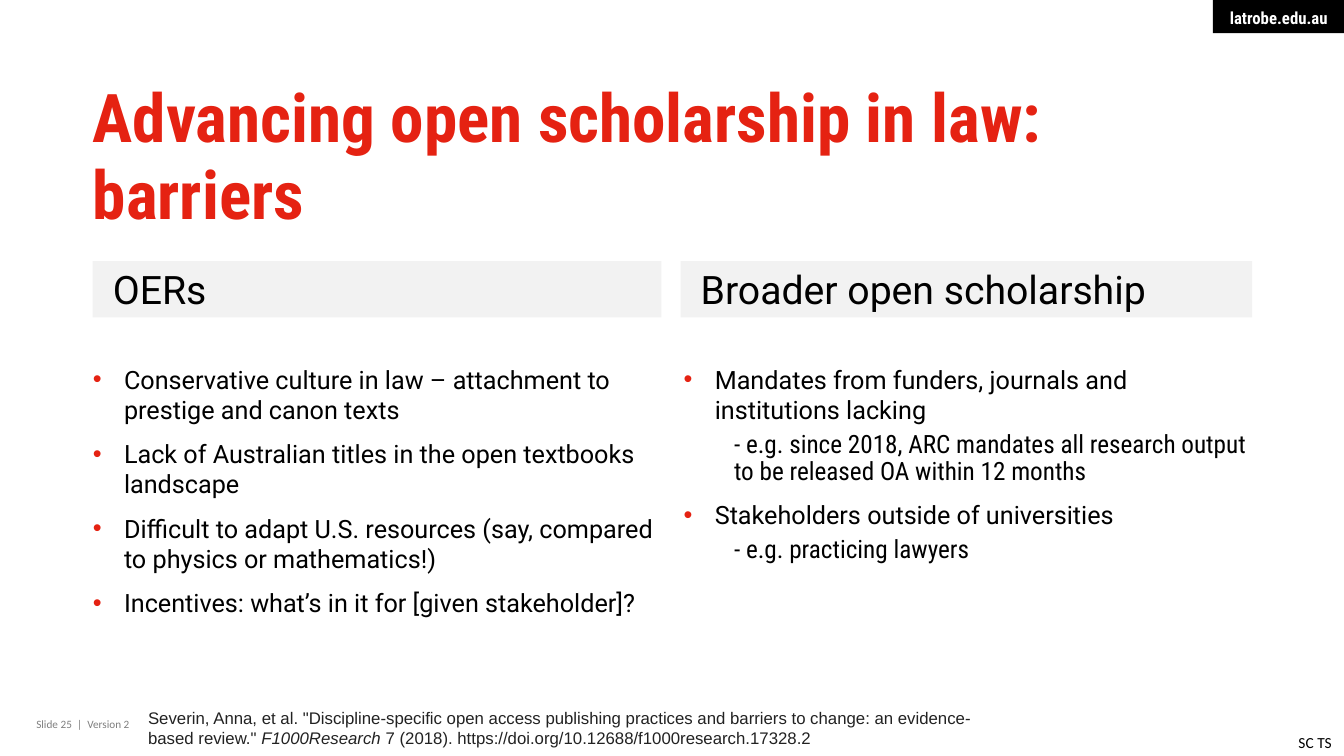
import pptx
import pptx.util
import pptx.dml.color
import pptx.enum.shapes
import pptx.enum.text
from lxml import etree
from pptx.util import Inches, Pt

HUES = {"red": "E52212", "black": "000000", "white": "FFFFFF",
        "pale": "F2F2F2", "grey": "7F7F7F", "ink": "222222"}
HEAD = "Roboto Condensed"
BODY = "Roboto"
ALIGN = pptx.enum.text.PP_ALIGN
ANCHOR = pptx.enum.text.MSO_ANCHOR

OERS = [
    (0, "Conservative culture in law – attachment to prestige and canon texts"),
    (0, "Lack of Australian titles in the open textbooks landscape"),
    (0, "Difficult to adapt U.S. resources (say, compared to physics or mathematics!)"),
    (0, "Incentives: what’s in it for [given stakeholder]?"),
]
BROAD = [
    (0, "Mandates from funders, journals and institutions lacking"),
    (1, "- e.g. since 2018, ARC mandates all research output to be released OA within 12 months"),
    (0, "Stakeholders outside of universities"),
    (1, "- e.g. practicing lawyers"),
]
CITE = [
    ('Severin, Anna, et al. "Discipline-specific open access publishing practices '
     'and barriers to change: an evidence-based review." ', False),
    ("F1000Research", True),
    (" 7 (2018). https://doi.org/10.12688/f1000research.17328.2", False),
]


def color(name):
    """Return the named colour."""
    return pptx.dml.color.RGBColor.from_string(HUES[name])


def place(shape, box):
    """Move a shape to a box given in inches."""
    shape.left, shape.top, shape.width, shape.height = map(Inches, box)


def style(para, face, size, hue, bold=False):
    """Format every run of a paragraph."""
    for run in para.runs:
        run.font.name = face
        run.font.size = Pt(size)
        run.font.bold = bold
        run.font.color.rgb = color(hue)


def setup(frame, pads, anchor=ANCHOR.TOP, wrap=True):
    """Set the insets, anchor and wrapping of a text frame."""
    frame.auto_size = pptx.enum.text.MSO_AUTO_SIZE.NONE
    frame.word_wrap = wrap
    frame.vertical_anchor = anchor
    (frame.margin_left, frame.margin_top,
     frame.margin_right, frame.margin_bottom) = map(Inches, pads)


def bar(slide, box, fill, text, pads, anchor):
    """Draw a filled bar with text and return its paragraph."""
    shape = slide.shapes.add_shape(
        pptx.enum.shapes.MSO_SHAPE.RECTANGLE, *map(Inches, box))
    shape.shadow.inherit = False
    shape.fill.solid()
    shape.fill.fore_color.rgb = color(fill)
    shape.line.fill.background()
    setup(shape.text_frame, pads, anchor)
    shape.text_frame.text = text
    para = shape.text_frame.paragraphs[0]
    para.alignment = ALIGN.LEFT
    return para


def note(slide, box, parts, face, size, hue, left=0.1, wrap=True):
    """Add a small text box made of plain and italic parts."""
    frame = slide.shapes.add_textbox(*map(Inches, box)).text_frame
    setup(frame, (left, 0.05, 0.1, 0.05), wrap=wrap)
    para = frame.paragraphs[0]
    for text, slant in parts:
        run = para.add_run()
        run.text = text
        run.font.italic = slant
    style(para, face, size, hue)


def bullet(para, level):
    """Set the indent and bullet of a list paragraph."""
    props = para._p.get_or_add_pPr()
    left, first = ((0.31, -0.31), (0.5, 0))[level]
    props.set("marL", str(Inches(left)))
    props.set("indent", str(Inches(first)))
    space = pptx.oxml.ns.nsdecls("a")
    marks = [f"<a:buNone {space}/>"] if level else [
        f'<a:buClr {space}><a:srgbClr val="{HUES["red"]}"/></a:buClr>',
        f'<a:buFont {space} typeface="Arial"/>',
        f'<a:buChar {space} char="•"/>']
    for mark in marks:
        props.append(etree.fromstring(mark))


def title(slide, box):
    """Fill the title placeholder."""
    shape = slide.shapes.title
    place(shape, box)
    setup(shape.text_frame, (0, 0, 0, 0))
    shape.text_frame.text = "Advancing open scholarship in law:\vbarriers"
    para = shape.text_frame.paragraphs[0]
    para.alignment = ALIGN.LEFT
    para.line_spacing = Pt(55)
    style(para, HEAD, 48, "red", True)


def points(shape, box, items):
    """Fill a body placeholder with a two-level list."""
    place(shape, box)
    frame = shape.text_frame
    setup(frame, (0, 0, 0, 0))
    frame.text = "\n".join(text for _, text in items)
    levels = [level for level, _ in items]
    for para, level, after in zip(frame.paragraphs, levels, levels[1:] + [0]):
        para.level = level
        bullet(para, level)
        para.alignment = ALIGN.LEFT
        para.line_spacing = 0.9 if level else 1.0
        para.space_before = Pt(5 if level else 0)
        para.space_after = Pt(0 if after > level else 10)
        style(para, HEAD if level else BODY, 18, "black")


def column(slide, slot, box, inset, head, items):
    """Build a headed column in the box given."""
    left, top, width, height = box
    para = bar(slide, (left, top, width, 0.56), "pale", head,
               (0.2, 0.04, 0.1, 0.05), ANCHOR.MIDDLE)
    style(para, BODY, 28, "black")
    points(slide.placeholders[slot],
           (left + inset, top + 1.02, width, height - 1.02), items)


def frame(slide, wide):
    """Add the web address tab and the footer texts."""
    para = bar(slide, (wide - 1.3, 0, 1.3, 0.33), "black", "latrobe.edu.au",
               (0.1, 0.08, 0.16, 0.05), ANCHOR.TOP)
    para.alignment = ALIGN.RIGHT
    style(para, HEAD, 12, "white", True)
    note(slide, (0.36, 7.07, 2.69, 0.24), [("Slide 25  |  Version 2", False)],
         "Calibri", 8, "grey", left=0)
    note(slide, (1.37, 6.97, 8.55, 0.5), CITE, "Arial", 12, "ink")
    note(slide, (wide - 0.55, 7.22, 0.55, 0.29), [("SC TS", False)],
         "Calibri", 11, "black", wrap=False)


def main():
    """Build and save the slide."""
    deck = pptx.Presentation()
    deck.slide_width, deck.slide_height = Inches(13.33), Inches(7.5)
    slide = deck.slides.add_slide(deck.slide_layouts[3])
    frame(slide, 13.33)
    title(slide, (0.92, 0.78, 11.5, 1.45))
    column(slide, 1, (0.92, 2.59, 5.64, 3.58), 0, "OERs", OERS)
    column(slide, 2, (6.75, 2.59, 5.67, 4.56), 0.03,
           "Broader open scholarship", BROAD)
    deck.save("out.pptx")


if __name__ == "__main__":
    main()
